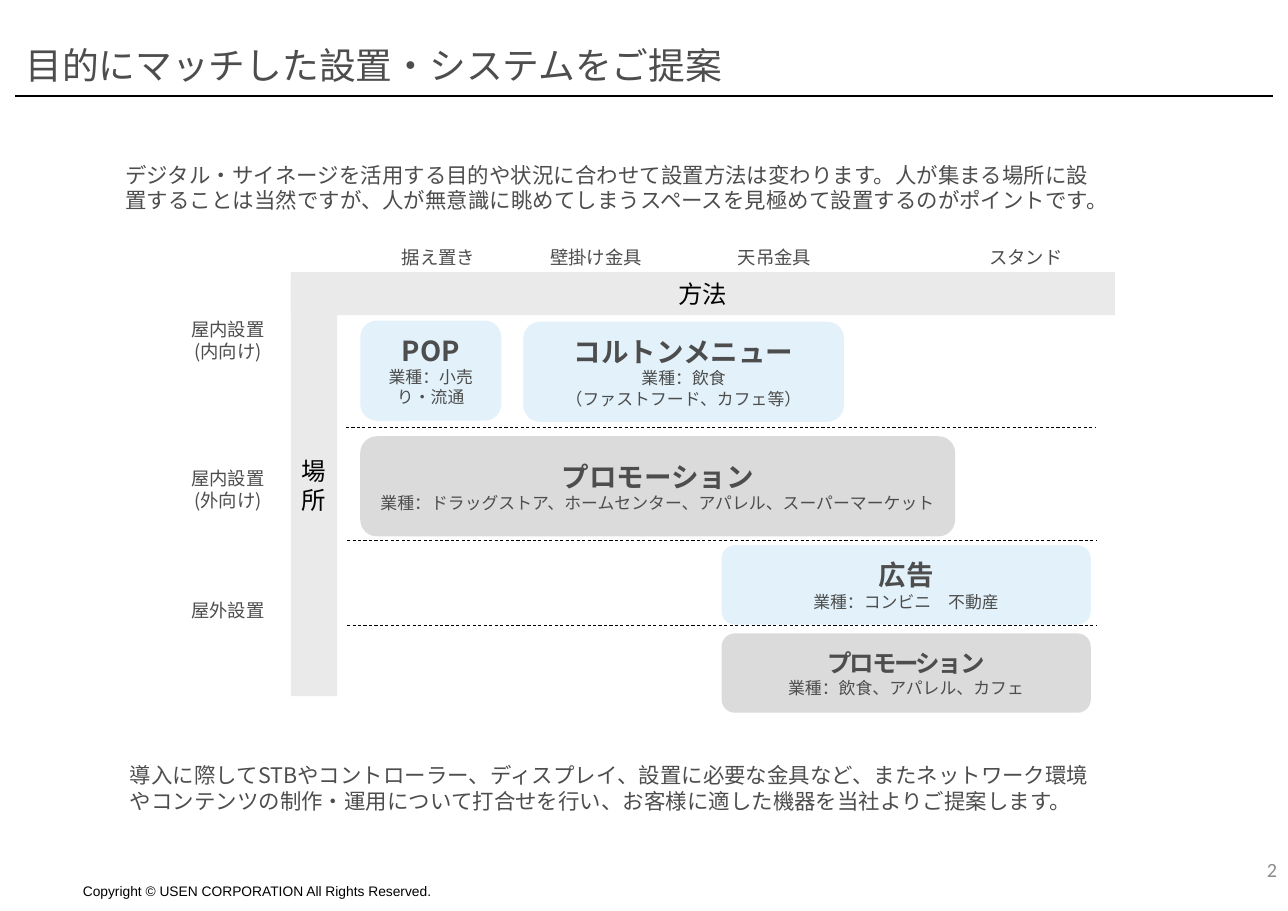
from lxml import etree
from pptx import Presentation
from pptx import util as u
from pptx.dml.color import RGBColor
from pptx.enum import dml, shapes, text
from pptx.oxml.ns import qn

GOTHIC = "Noto Sans CJK JP"
COLORS = {
    "ink": "4D4D4D",
    "black": "000000",
    "number": "8C8C8C",
    "axis": "EAEAEA",
    "blue": "E2F1FA",
    "grey": "DBDBDB",
}
CENTER, LEFT, RIGHT = text.PP_ALIGN.CENTER, text.PP_ALIGN.LEFT, text.PP_ALIGN.RIGHT

METHODS = [("据え置き", 1.34), ("壁掛け金具", 2.77), ("天吊金具", 4.39), ("スタンド", 6.67)]
PLACES = [(["屋内設置", "(内向け)"], 0.37), (["屋内設置", "(外向け)"], 1.72), (["屋外設置"], 2.92)]
DIVIDERS = [(0.5, 1.41), (0.51, 2.44), (0.51, 3.21)]
# Left, top, width, height, fill, heading, heading format, lines below
USES = [
    (0.63, 0.44, 1.28, 0.91, "blue", "POP", {"size": 18}, ["業種：小売り・流通"]),
    (2.11, 0.45, 2.91, 0.91, "blue", "コルトンメニュー", {"size": 18},
     ["業種：飲食", "（ファストフード、カフェ等）"]),
    (0.63, 1.49, 5.4, 0.91, "grey", "プロモーション", {"size": 18},
     ["業種：ドラッグストア、ホームセンター、アパレル、スーパーマーケット"]),
    (3.91, 2.48, 3.35, 0.72, "blue", "広告", {"size": 18}, ["業種：コンビニ　不動産"]),
    (3.91, 3.28, 3.35, 0.72, "grey", "プロモーション", {"size": 16, "spacing": -1.5},
     ["業種：飲食、アパレル、カフェ"]),
]


def rgb(name):
    return RGBColor.from_string(COLORS[name])


def write(frame, lines, align=LEFT, line_spacing=None):
    """Fill a text frame with one paragraph per (wording, format) pair."""
    for index, (wording, style) in enumerate(lines):
        para = frame.add_paragraph() if index else frame.paragraphs[0]
        para.alignment = align
        if line_spacing:
            para.line_spacing = line_spacing
        span = para.add_run()
        span.text = wording
        values = {"name": GOTHIC, "bold": False, **style}
        color = values.pop("color", "ink")
        spacing = values.pop("spacing", None)
        for key, value in values.items():
            setattr(span.font, key, u.Pt(value) if key == "size" else value)
        span.font.color.rgb = rgb(color)
        properties = span.font._element
        if spacing:
            properties.set("spc", str(round(spacing * 100)))
        latin = properties.find(qn("a:latin"))
        east_asian = etree.Element(qn("a:ea"), typeface=values["name"])
        latin.addnext(east_asian)


def add_text(page, box, lines, align=LEFT, wrap=True, anchor=text.MSO_ANCHOR.TOP):
    frame = page.shapes.add_textbox(*map(u.Inches, box)).text_frame
    frame.word_wrap = wrap
    frame.vertical_anchor = anchor
    write(frame, lines, align)


def add_panel(page, kind, box, fill, lines):
    panel = page.shapes.add_shape(kind, *map(u.Inches, box))
    panel.shadow.inherit = False
    panel.fill.solid()
    panel.fill.fore_color.rgb = rgb(fill)
    panel.line.fill.background()
    panel.text_frame.word_wrap = True
    panel.text_frame.vertical_anchor = text.MSO_ANCHOR.MIDDLE
    write(panel.text_frame, lines, CENTER)


def add_rule(page, left, top, width, weight, dash=None):
    ends = map(u.Inches, (left, top, left + width, top))
    rule = page.shapes.add_connector(shapes.MSO_CONNECTOR.STRAIGHT, *ends)
    rule.line.color.rgb = rgb("black")
    rule.line.width = u.Pt(weight)
    if dash:
        rule.line.dash_style = dash
    etree.SubElement(rule._element.spPr, qn("a:effectLst"))


def add_header(page, left, top, width):
    title = page.shapes.title
    box = {"left": left, "top": top, "width": 6.65, "height": 0.47}
    for key, value in box.items():
        setattr(title, key, u.Inches(value))
    frame = title.text_frame
    frame.auto_size = text.MSO_AUTO_SIZE.NONE
    frame.vertical_anchor = text.MSO_ANCHOR.MIDDLE
    write(frame, [("目的にマッチした設置・システムをご提案", {"size": 24})], line_spacing=0.9)
    add_rule(page, left + 0.01, top + 0.49, width, 1)


def add_matrix(page, left, top, width, height):
    """Draw the grid of installation methods against places."""
    axis = {"size": 16, "color": "black"}
    rectangle = shapes.MSO_SHAPE.RECTANGLE
    add_panel(page, rectangle, (left, top + 0.02, 0.42, height - 0.02), "axis", [("場所", axis)])
    add_panel(page, rectangle, (left, top, width, 0.39), "axis", [("方法", axis)])

    label = {"size": 12}
    for name, center in METHODS:
        box = (left + center - 0.52, top - 0.28, 1.04, 0.3)
        add_text(page, box, [(name, label)], CENTER, wrap=False)
    for names, offset in PLACES:
        box = (left - 1.22, top + offset, 1.3, 0.1 + 0.2 * len(names))
        add_text(page, box, [(name, label) for name in names], CENTER)

    for x, y in DIVIDERS:
        add_rule(page, left + x, top + y, 6.81, 0.5, dml.MSO_LINE.DASH)
    for x, y, use_width, use_height, fill, heading, style, details in USES:
        lines = [(heading, {"bold": True, **style})]
        lines += [(detail, {"size": 11}) for detail in details]
        box = (left + x, top + y, use_width, use_height)
        add_panel(page, shapes.MSO_SHAPE.ROUNDED_RECTANGLE, box, fill, lines)


def add_footer(page, top, width):
    notice = ("Copyright © USEN CORPORATION All Rights Reserved.",
              {"name": "Arial", "size": 9, "color": "black"})
    number = ("2", {"name": "Calibri", "size": 13.2, "color": "number"})
    add_text(page, (0, top + 0.28, 4.01, 0.28), [notice], RIGHT)
    add_text(page, (width - 0.55, top, 0.55, 0.43), [number], RIGHT,
             anchor=text.MSO_ANCHOR.MIDDLE)


def main():
    deck = Presentation()
    deck.slide_width, deck.slide_height = u.Inches(11.69), u.Inches(8.27)
    page = deck.slides.add_slide(deck.slide_layouts[5])
    add_header(page, 0.13, 0.38, 11.41)
    add_text(page, (1.04, 1.42, 9.03, 0.57), [(
        "デジタル・サイネージを活用する目的や状況に合わせて設置方法は変わります。"
        "人が集まる場所に設置することは当然ですが、"
        "人が無意識に眺めてしまうスペースを見極めて設置するのがポイントです。", {"size": 14})])
    add_matrix(page, 2.64, 2.47, 7.48, 3.85)
    add_text(page, (1.08, 6.87, 9.03, 0.57), [(
        "導入に際してSTBやコントローラー、ディスプレイ、設置に必要な金具など、"
        "またネットワーク環境やコンテンツの制作・運用について打合せを行い、"
        "お客様に適した機器を当社よりご提案します。", {"size": 14})])
    add_footer(page, 7.68, 11.69)
    deck.save("out.pptx")


if __name__ == "__main__":
    main()
